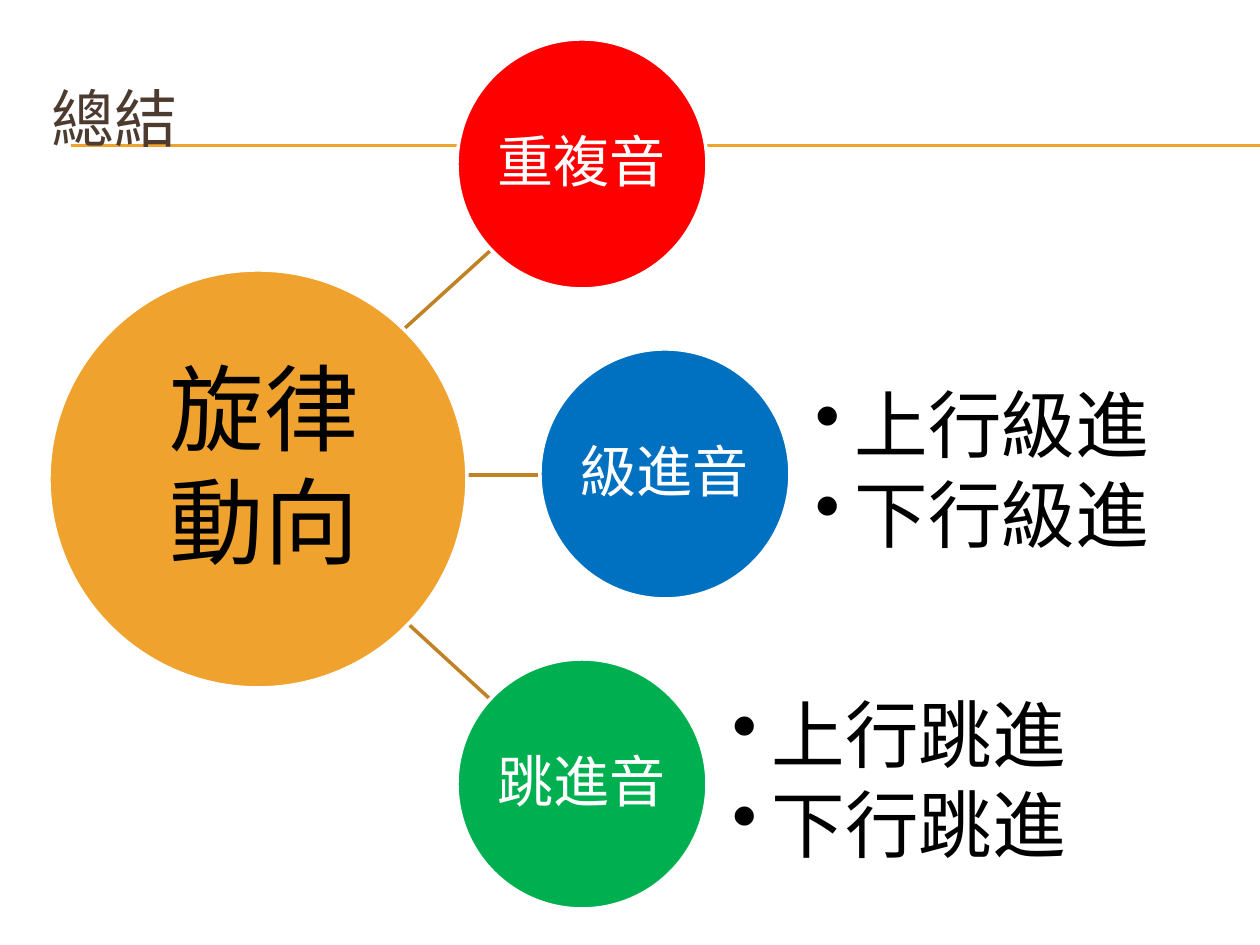
import pptx
import pptx.dml.color
import pptx.enum.shapes
import pptx.enum.text
import pptx.oxml.ns
import pptx.util
from lxml import etree

PX_PER_INCH = 126
FONT = "Karla"
MIDDLE = pptx.enum.text.MSO_ANCHOR.MIDDLE
TOP = pptx.enum.text.MSO_ANCHOR.TOP


def px(length):
    return pptx.util.Emu(round(length * 914400 / PX_PER_INCH))


def color(hex_value):
    return pptx.dml.color.RGBColor.from_string(hex_value)


def add_child(parent, tag, **attributes):
    return etree.SubElement(parent, pptx.oxml.ns.qn(tag), **attributes)


def set_frame(frame, margin, anchor):
    frame.word_wrap = True
    frame.vertical_anchor = anchor
    frame.margin_left = frame.margin_right = px(margin)
    frame.margin_top = frame.margin_bottom = px(margin // 2)


def style(paragraph, size, hex_value, font=FONT):
    paragraph.font.size = pptx.util.Pt(size)
    paragraph.font.name = font
    paragraph.font.color.rgb = color(hex_value)


def add_line(slide, start, end, hex_value, width):
    line = slide.shapes.add_connector(
        pptx.enum.shapes.MSO_CONNECTOR.STRAIGHT, *map(px, start + end))
    line.line.color.rgb = color(hex_value)
    line.line.width = pptx.util.Pt(width)
    add_child(line._element.spPr, "a:effectLst")


def add_circle(slide, left, top, diameter, fill, label=""):
    circle = slide.shapes.add_shape(
        pptx.enum.shapes.MSO_SHAPE.OVAL, px(left), px(top), px(diameter), px(diameter))
    circle.shadow.inherit = False
    circle.fill.solid()
    circle.fill.fore_color.rgb = color(fill)
    circle.line.color.rgb = color("FFFFFF")
    circle.line.width = pptx.util.Pt(2)
    if label:
        set_frame(circle.text_frame, 2, MIDDLE)
        paragraph = circle.text_frame.paragraphs[0]
        paragraph.text = label
        paragraph.alignment = pptx.enum.text.PP_ALIGN.CENTER
        paragraph.line_spacing = 0.9
        style(paragraph, 32, "FFFFFF")


def add_text(slide, box, text, size, hex_value, font=FONT, anchor=MIDDLE):
    frame = slide.shapes.add_textbox(*map(px, box)).text_frame
    set_frame(frame, 13, anchor)
    frame.paragraphs[0].text = text
    style(frame.paragraphs[0], size, hex_value, font)


def add_bullets(slide, box, items):
    frame = slide.shapes.add_textbox(*map(px, box)).text_frame
    set_frame(frame, 0, MIDDLE)
    frame.text = "\n".join(items)
    for paragraph in frame.paragraphs:
        paragraph.line_spacing = 0.9
        paragraph.space_after = pptx.util.Pt(6)
        style(paragraph, 42, "000000")
        properties = paragraph._p.get_or_add_pPr()
        properties.set("marL", str(px(39)))
        properties.set("indent", str(-px(39)))
        # The bullet belongs just before the default run properties
        bullet = add_child(properties, "a:buChar", char="•")
        properties.find(pptx.oxml.ns.qn("a:defRPr")).addprevious(bullet)


def main():
    deck = pptx.Presentation()
    deck.slide_width, deck.slide_height = px(1260), px(945)
    slide = deck.slides.add_slide(deck.slide_layouts[6])

    # Title over its double rule
    for rule_y in (145, 146):
        add_line(slide, (71, rule_y), (1260, rule_y), "F0A22E", 0.75)
    add_text(slide, (39, 59, 1197, 116), "總結", 36, "4E3B30")

    # Spokes from the hub to the three kinds of motion
    for start, end in (((393, 610), (490, 699)),
                       ((393, 475), (539, 475)),
                       ((393, 339), (490, 251))):
        add_line(slide, start, end, "C08225", 2)
    add_circle(slide, 49, 270, 418, "F0A22E")

    # Kinds of motion, evenly spaced, with their directions beside them
    diameter, gap = 250, 26
    motions = (
        (457, "FF0000", "重複音", ()),
        (540, "0070C0", "級進音", ("上行級進", "下行級進")),
        (457, "00B050", "跳進音", ("上行跳進", "下行跳進")),
    )
    for row, (left, fill, label, directions) in enumerate(motions):
        top = 39 + row * 310
        add_circle(slide, left, top, diameter, fill, label)
        if directions:
            add_bullets(slide, (left + diameter + gap, top, 377, diameter), directions)

    # Hub label
    add_text(slide, (157, 344, 217, 242), "旋律動向", 54, "000000",
             "Noto Sans CJK JP", TOP)

    deck.save("out.pptx")


if __name__ == "__main__":
    main()
